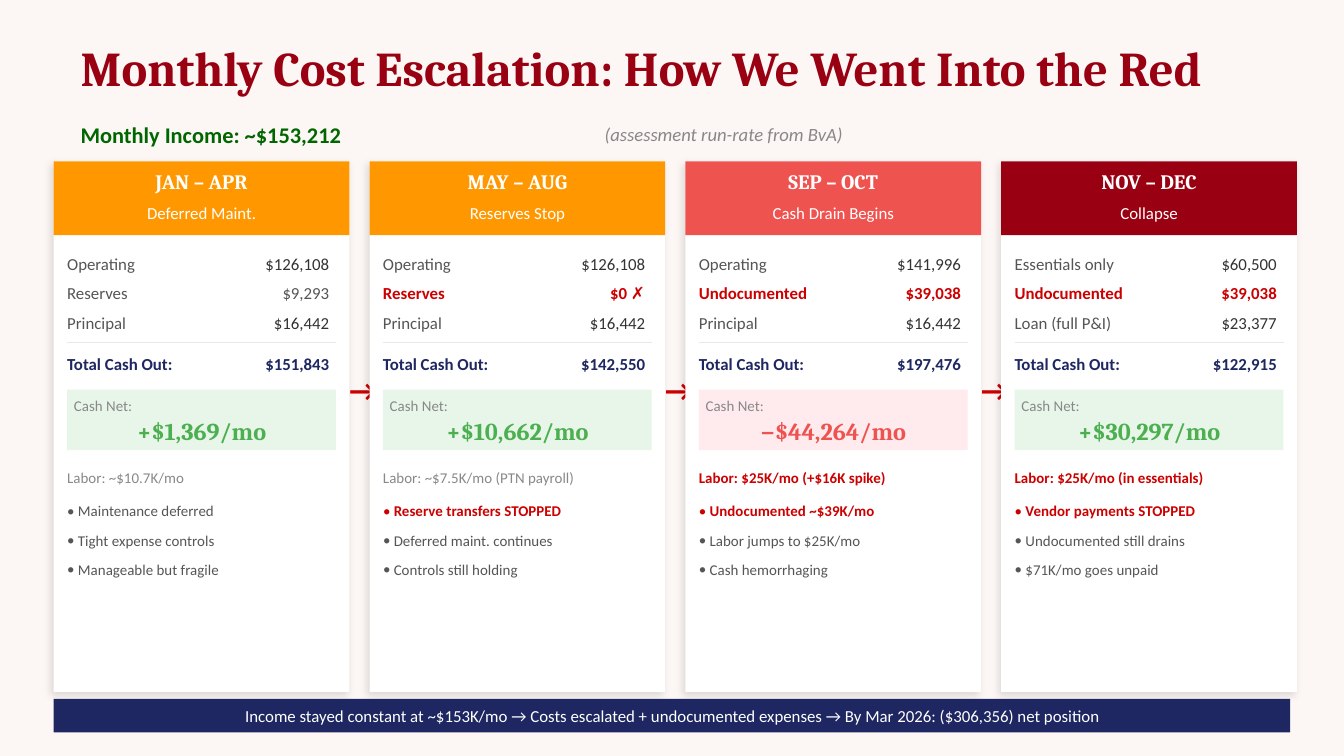
from dataclasses import dataclass

import lxml.etree
import pptx
import pptx.dml.color
import pptx.enum.shapes
import pptx.enum.text
import pptx.oxml.ns
import pptx.shapes.autoshape
import pptx.slide
import pptx.util
from pptx.util import Inches, Pt

RGBColor = pptx.dml.color.RGBColor
Align = pptx.enum.text.PP_ALIGN
qn = pptx.oxml.ns.qn

CREAM = RGBColor(0xFC, 0xF6, 0xF5)
WHITE = RGBColor(0xFF, 0xFF, 0xFF)
CRIMSON = RGBColor(0x99, 0x00, 0x11)
ORANGE = RGBColor(0xFF, 0x98, 0x00)
CORAL = RGBColor(0xEF, 0x53, 0x50)
ALERT_RED = RGBColor(0xCC, 0x00, 0x00)
INCOME_GREEN = RGBColor(0x00, 0x66, 0x00)
GAIN_GREEN = RGBColor(0x4C, 0xAF, 0x50)
GAIN_FILL = RGBColor(0xE8, 0xF5, 0xE9)
LOSS_FILL = RGBColor(0xFF, 0xEB, 0xEE)
NAVY = RGBColor(0x1E, 0x27, 0x61)
INK = RGBColor(0x33, 0x33, 0x33)
SLATE = RGBColor(0x55, 0x55, 0x55)
GRAY = RGBColor(0x88, 0x88, 0x88)
RULE_GRAY = RGBColor(0xE8, 0xE8, 0xE8)

TITLE = {"name": "Cambria", "size": Pt(26), "bold": True}
INCOME = {"name": "Calibri", "size": Pt(12), "bold": True}
ASIDE = {"name": "Calibri", "size": Pt(10), "italic": True}
PERIOD = {"name": "Cambria", "size": Pt(11), "bold": True}
NORMAL = {"name": "Calibri", "size": Pt(9), "bold": False}
STRONG = {"name": "Calibri", "size": Pt(9), "bold": True}
SMALL = {"name": "Calibri", "size": Pt(8), "bold": False}
SMALL_STRONG = {"name": "Calibri", "size": Pt(8), "bold": True}
NET = {"name": "Cambria", "size": Pt(13), "bold": True}
ARROW = {"name": "Calibri", "size": Pt(16), "bold": True}

CARD_LEFT, CARD_TOP, CARD_WIDTH, CARD_HEIGHT = 0.4, 1.2, 2.2, 3.95
CARD_GAP = 0.15
PADDING = 0.1
ROW_TOP, ROW_HEIGHT = 1.85, 0.22


@dataclass
class Cost:
    label: str
    amount: str
    alert: bool = False
    amount_color: RGBColor = INK


@dataclass
class Period:
    months: str
    phase: str
    color: RGBColor
    costs: list[Cost]
    total: str
    net: str
    labor: str
    points: list[str]
    gain: bool = True
    labor_alert: bool = False
    first_point_alert: bool = False


PERIODS = [
    Period("JAN – APR", "Deferred Maint.", ORANGE,
           [Cost("Operating", "$126,108"), Cost("Reserves", "$9,293", amount_color=SLATE),
            Cost("Principal", "$16,442")],
           "$151,843", "+$1,369/mo", "Labor: ~$10.7K/mo",
           ["Maintenance deferred", "Tight expense controls", "Manageable but fragile"]),
    Period("MAY – AUG", "Reserves Stop", ORANGE,
           [Cost("Operating", "$126,108"), Cost("Reserves", "$0 ✗", alert=True),
            Cost("Principal", "$16,442")],
           "$142,550", "+$10,662/mo", "Labor: ~$7.5K/mo (PTN payroll)",
           ["Reserve transfers STOPPED", "Deferred maint. continues", "Controls still holding"],
           first_point_alert=True),
    Period("SEP – OCT", "Cash Drain Begins", CORAL,
           [Cost("Operating", "$141,996"), Cost("Undocumented", "$39,038", alert=True),
            Cost("Principal", "$16,442")],
           "$197,476", "−$44,264/mo", "Labor: $25K/mo (+$16K spike)",
           ["Undocumented ~$39K/mo", "Labor jumps to $25K/mo", "Cash hemorrhaging"],
           gain=False, labor_alert=True, first_point_alert=True),
    Period("NOV – DEC", "Collapse", CRIMSON,
           [Cost("Essentials only", "$60,500"), Cost("Undocumented", "$39,038", alert=True),
            Cost("Loan (full P&I)", "$23,377")],
           "$122,915", "+$30,297/mo", "Labor: $25K/mo (in essentials)",
           ["Vendor payments STOPPED", "Undocumented still drains", "$71K/mo goes unpaid"],
           labor_alert=True, first_point_alert=True),
]


def place(shape, left: float, top: float, width: float, height: float) -> None:
    bounds = {"left": left, "top": top, "width": width, "height": height}
    for name, value in bounds.items():
        setattr(shape, name, Inches(value))


def prepare_frame(shape):
    """Give the text frame no margins, middle anchoring and wrapping."""
    frame = shape.text_frame
    settings = {"margin_left": 0, "margin_top": 0, "margin_right": 0, "margin_bottom": 0,
                "word_wrap": True, "auto_size": pptx.enum.text.MSO_AUTO_SIZE.NONE,
                "vertical_anchor": pptx.enum.text.MSO_ANCHOR.MIDDLE}
    for name, value in settings.items():
        setattr(frame, name, value)
    return frame


def write(paragraph, text: str, style: dict, color: RGBColor, align=Align.LEFT) -> None:
    paragraph.alignment = align
    run = paragraph.add_run()
    run.text = text
    for name, value in style.items():
        setattr(run.font, name, value)
    run.font.color.rgb = color


def add_text(slide: pptx.slide.Slide, bounds: tuple, text: str, style: dict,
             color: RGBColor, align=Align.LEFT) -> None:
    shape = slide.shapes.add_textbox(*(Inches(value) for value in bounds))
    write(prepare_frame(shape).paragraphs[0], text, style, color, align)


def add_box(slide: pptx.slide.Slide, bounds: tuple,
            fill: RGBColor) -> pptx.shapes.autoshape.Shape:
    shape = slide.shapes.add_shape(pptx.enum.shapes.MSO_SHAPE.RECTANGLE,
                                   *(Inches(value) for value in bounds))
    shape.shadow.inherit = False
    shape.fill.solid()
    shape.fill.fore_color.rgb = fill
    shape.line.fill.background()
    return shape


def add_soft_shadow(shape: pptx.shapes.autoshape.Shape) -> None:
    effects = shape._element.spPr.find(qn("a:effectLst"))
    shadow = lxml.etree.SubElement(effects, qn("a:outerShdw"), blurRad=str(Pt(4)),
                                   dist=str(Pt(2)), dir=str(135 * 60000))
    color = lxml.etree.SubElement(shadow, qn("a:srgbClr"), val="000000")
    lxml.etree.SubElement(color, qn("a:alpha"), val="12000")


def add_rule(slide: pptx.slide.Slide, left: float, top: float, width: float) -> None:
    line = slide.shapes.add_connector(pptx.enum.shapes.MSO_CONNECTOR.STRAIGHT, Inches(left),
                                      Inches(top), Inches(left + width), Inches(top))
    line.line.color.rgb = RULE_GRAY
    line.line.width = Pt(0.8)
    lxml.etree.SubElement(line._element.spPr, qn("a:effectLst"))


def fill_points(slide: pptx.slide.Slide, placeholder, bounds: tuple, period: Period) -> None:
    slide.shapes._spTree.append(placeholder._element)  # bring in front of the card
    place(placeholder, *bounds)
    frame = prepare_frame(placeholder)
    for index, point in enumerate(period.points):
        paragraph = frame.add_paragraph() if index else frame.paragraphs[0]
        properties = paragraph._p.get_or_add_pPr()
        properties.set("marL", str(Inches(0.08)))
        properties.set("indent", str(-Inches(0.08)))
        lxml.etree.SubElement(properties, qn("a:buFont"), typeface="Calibri")
        lxml.etree.SubElement(properties, qn("a:buChar"), char="•")
        paragraph.space_before = Pt(6.1) if index else Pt(0)
        alert = period.first_point_alert and index == 0
        write(paragraph, point, SMALL_STRONG if alert else SMALL, ALERT_RED if alert else SLATE)


def add_amount_row(slide: pptx.slide.Slide, left: float, top: float, cost: Cost,
                   style: dict, label_color: RGBColor, amount_color: RGBColor) -> None:
    add_text(slide, (left, top, 1.2, ROW_HEIGHT), cost.label, style, label_color)
    add_text(slide, (left + 1, top, 0.95, ROW_HEIGHT), cost.amount, style, amount_color,
             Align.RIGHT)


def add_card(slide: pptx.slide.Slide, left: float, period: Period, points_placeholder) -> None:
    inner, width = left + PADDING, CARD_WIDTH - 2 * PADDING
    add_soft_shadow(add_box(slide, (left, CARD_TOP, CARD_WIDTH, CARD_HEIGHT), WHITE))
    add_box(slide, (left, CARD_TOP, CARD_WIDTH, 0.55), period.color)
    add_text(slide, (left, CARD_TOP, CARD_WIDTH, 0.3), period.months, PERIOD, WHITE, Align.CENTER)
    add_text(slide, (left, 1.46, CARD_WIDTH, 0.25), period.phase, NORMAL, WHITE, Align.CENTER)

    for index, cost in enumerate(period.costs):
        style, label_color, amount_color = ((STRONG, ALERT_RED, ALERT_RED) if cost.alert
                                            else (NORMAL, SLATE, cost.amount_color))
        add_amount_row(slide, inner, ROW_TOP + index * ROW_HEIGHT, cost, style,
                       label_color, amount_color)
    add_rule(slide, inner, 2.55, width)
    add_amount_row(slide, inner, 2.6, Cost("Total Cash Out:", period.total), STRONG, NAVY, NAVY)

    add_box(slide, (inner, 2.9, width, 0.45), GAIN_FILL if period.gain else LOSS_FILL)
    add_text(slide, (inner + 0.05, 2.92, 1, 0.2), "Cash Net:", SMALL, GRAY)
    add_text(slide, (inner, 3.08, width, 0.25), period.net, NET,
             GAIN_GREEN if period.gain else CORAL, Align.CENTER)

    add_text(slide, (inner, 3.45, width, 0.2), period.labor,
             SMALL_STRONG if period.labor_alert else SMALL,
             ALERT_RED if period.labor_alert else GRAY)
    fill_points(slide, points_placeholder, (inner, 3.7, width, 0.64), period)


def main() -> None:
    presentation = pptx.Presentation()
    presentation.slide_width = Inches(10)
    presentation.slide_height = presentation.slide_width * 9 // 16
    comparison_layout = presentation.slide_layouts[4]  # a title and four bodies
    slide = presentation.slides.add_slide(comparison_layout)
    slide.background.fill.solid()
    slide.background.fill.fore_color.rgb = CREAM

    title, *bodies = slide.placeholders
    place(title, 0.6, 0.2, 8.8, 0.6)
    write(prepare_frame(title).paragraphs[0],
          "Monthly Cost Escalation: How We Went Into the Red", TITLE, CRIMSON)
    add_text(slide, (0.6, 0.85, 4, 0.3), "Monthly Income: ~$153,212", INCOME, INCOME_GREEN)
    add_text(slide, (4.5, 0.85, 3, 0.3), "(assessment run-rate from BvA)", ASIDE, GRAY)

    for index, (period, body) in enumerate(zip(PERIODS, bodies)):
        left = CARD_LEFT + index * (CARD_WIDTH + CARD_GAP)
        if index:
            add_text(slide, (left - CARD_GAP, 2.7, 0.2, 0.4), "→", ARROW, ALERT_RED, Align.CENTER)
        add_card(slide, left, period, body)

    footer = add_box(slide, (CARD_LEFT, 5.2, 9.2, 0.25), NAVY)
    write(prepare_frame(footer).paragraphs[0],
          "Income stayed constant at ~$153K/mo → Costs escalated + undocumented expenses"
          " → By Mar 2026: ($306,356) net position", NORMAL, WHITE, Align.CENTER)
    presentation.save("out.pptx")


if __name__ == "__main__":
    main()
